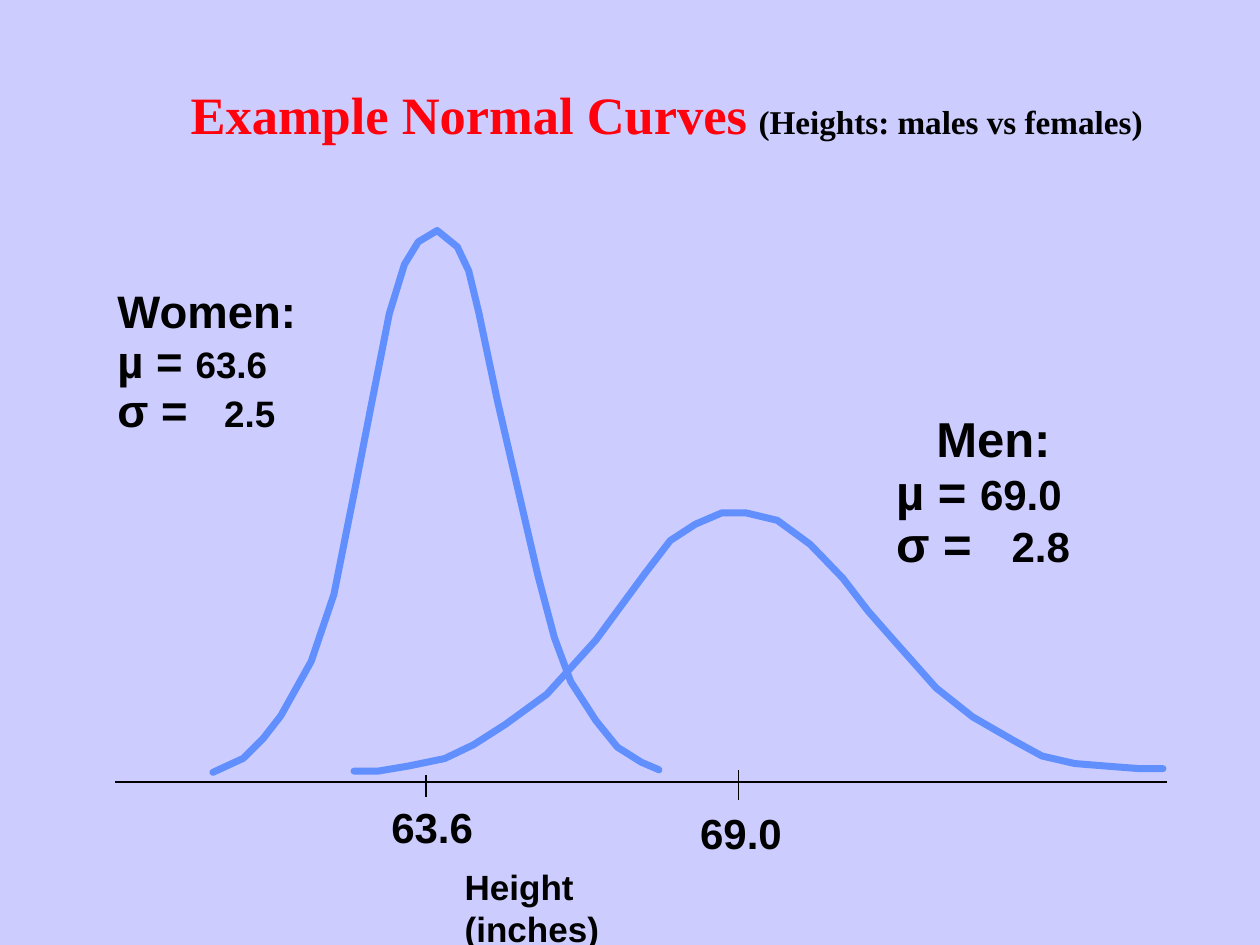
"""Build a slide comparing the normal curves of women's and men's heights."""
from lxml import etree
from pptx import Presentation
from pptx.dml.color import RGBColor
from pptx.enum.shapes import MSO_CONNECTOR
from pptx.enum.text import MSO_ANCHOR, PP_ALIGN
from pptx.oxml.ns import qn
from pptx.util import Pt

LINE = MSO_CONNECTOR.STRAIGHT
LEFT, MID = PP_ALIGN.LEFT, PP_ALIGN.CENTER
TOP, CORE = MSO_ANCHOR.TOP, MSO_ANCHOR.MIDDLE
LILAC = RGBColor(0xCC, 0xCC, 0xFF)
BLUE = RGBColor(0x61, 0x8F, 0xFD)
RED = RGBColor(0xFF, 0x02, 0x0E)
BLACK = RGBColor(0, 0, 0)

deck = Presentation()
deck.slide_width, deck.slide_height = Pt(720), Pt(540)
slide = deck.slides.add_slide(deck.slide_layouts[6])
slide.background.fill.solid()
slide.background.fill.fore_color.rgb = LILAC
shapes = slide.shapes


def write(rows, left, top, width, height, face="Arial", align=LEFT,
          anchor=TOP, space=0.9, wrap=True, tab=None, inset=0):
    box = shapes.add_textbox(Pt(left), Pt(top), Pt(width), Pt(height))
    frame = box.text_frame
    frame.word_wrap, frame.vertical_anchor = wrap, anchor
    for i, row in enumerate(rows):
        para = frame.paragraphs[0] if i == 0 else frame.add_paragraph()
        para.alignment, para.line_spacing = align, space
        props = para._p.get_or_add_pPr()
        if i == 0 and inset:
            props.set("marL", str(Pt(inset)))
        if tab:
            tabs = etree.SubElement(props, qn("a:tabLst"))
            etree.SubElement(tabs, qn("a:tab"), pos=str(Pt(tab)), algn="l")
        for text, size, color in row:
            run = para.add_run()
            run.text = text
            font = run.font
            font.name, font.size, font.bold = face, Pt(size), True
            font.color.rgb = color


men = [(281, 612), (300, 612), (324, 608), (353, 602), (376, 591), (401, 575),
       (434, 551), (473, 508), (512, 455), (532, 429), (552, 416), (573, 407),
       (592, 407), (617, 413), (643, 432), (669, 459), (689, 485), (711, 510),
       (743, 546), (772, 569), (805, 588), (827, 600), (853, 606), (878, 608),
       (904, 610), (923, 610)]
women = [(169, 613), (193, 602), (209, 586), (223, 568), (247, 525),
         (265, 472), (281, 392), (294, 325), (309, 249), (321, 210),
         (332, 192), (347, 183), (363, 196), (372, 215), (380, 248),
         (395, 319), (427, 457), (440, 506), (453, 541), (473, 572),
         (490, 593), (509, 605), (523, 611)]
for first, *rest in (men, women):
    path = shapes.build_freeform(*first, scale=Pt(0.72))
    path.add_line_segments(rest, close=False)
    curve = path.convert_to_shape()
    curve.shadow.inherit = False
    curve.fill.background()
    curve.line.color.rgb = BLUE
    curve.line.width = Pt(4)
    edge = curve._element.spPr.find(qn("a:ln"))
    edge.set("cap", "rnd")
    etree.SubElement(edge, qn("a:round"))

axis = (66, 447, 667, 447)
ticks = [(243.5, 443, 243.5, 455.5), (422, 440, 422, 457)]
for ends in (axis, *ticks):
    rule = shapes.add_connector(LINE, *map(Pt, ends))
    rule.line.color.rgb = BLACK
    rule.line.width = Pt(1)
    etree.SubElement(rule._element.spPr, qn("a:effectLst"))

write([[("Example Normal Curves", 30, RED), (" ", 25, BLACK),
        ("(Heights: males vs females)", 19, BLACK)]],
      42, 36, 678, 57.5, face="Times New Roman", align=MID, anchor=CORE,
      space=1.0)

groups = [
    ("Women:", "63.6", "2.5", 26, 21, (60, 162, 137.5, 112), 61, 0),
    ("Men:", "69.0", "2.8", 28, 24, (505, 233.5, 150, 133), 66, 23),
]
for name, mean, dev, big, small, place, tab, inset in groups:
    write([[(name, big, BLACK)],
           [("µ = ", big, BLACK), (mean, small, BLACK)],
           [("σ =\t", big, BLACK), (dev, small, BLACK)]],
          *place, tab=tab, inset=inset)

for mean, left, top in (("63.6", 216.5, 458), ("69.0", 393, 461)):
    write([[(mean, 24, BLACK)]], left, top, 61, 33, wrap=False)
write([[("Height (inches)", 20, BLACK)]], 258.5, 491, 155, 31, space=1.0)

deck.save("out.pptx")
